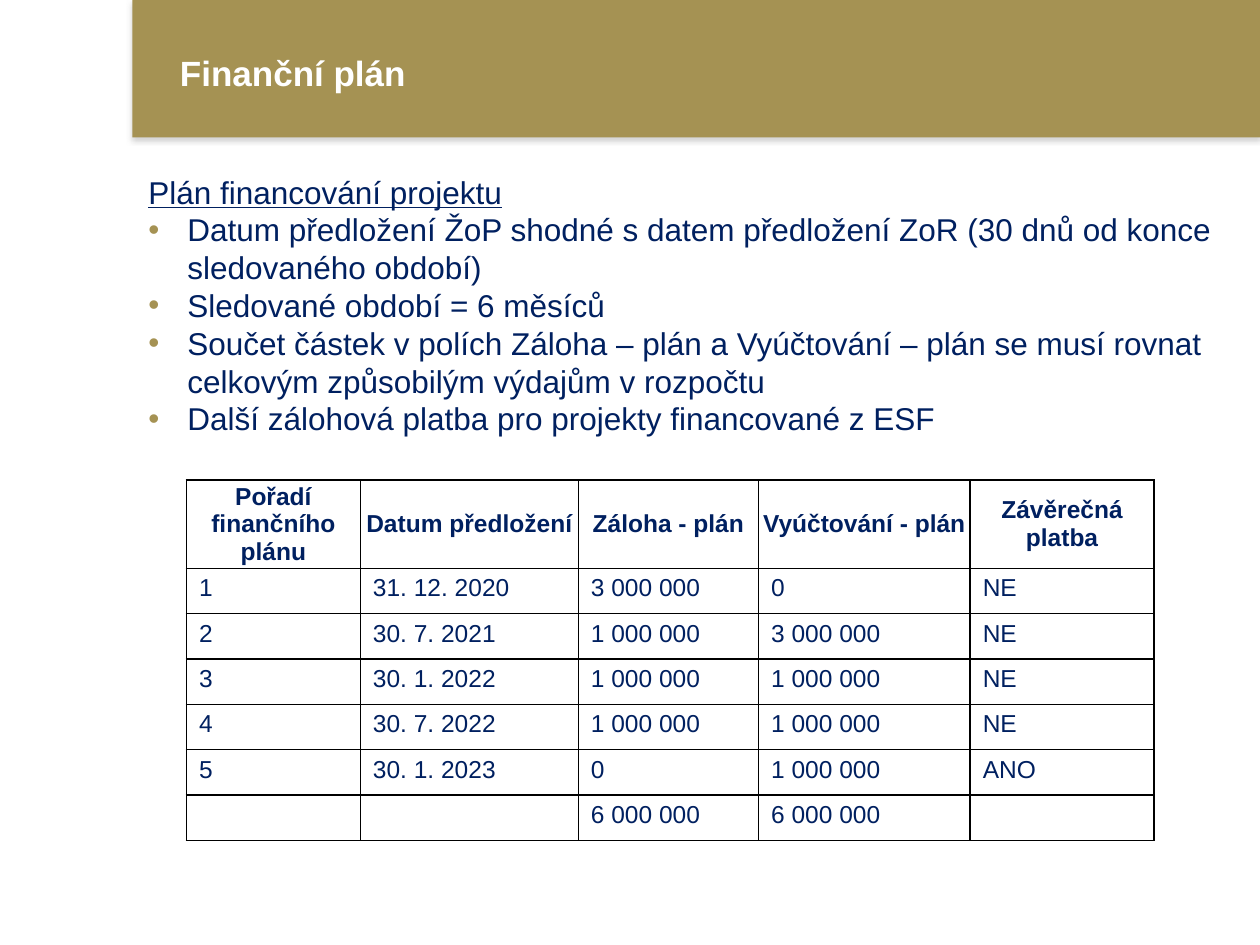
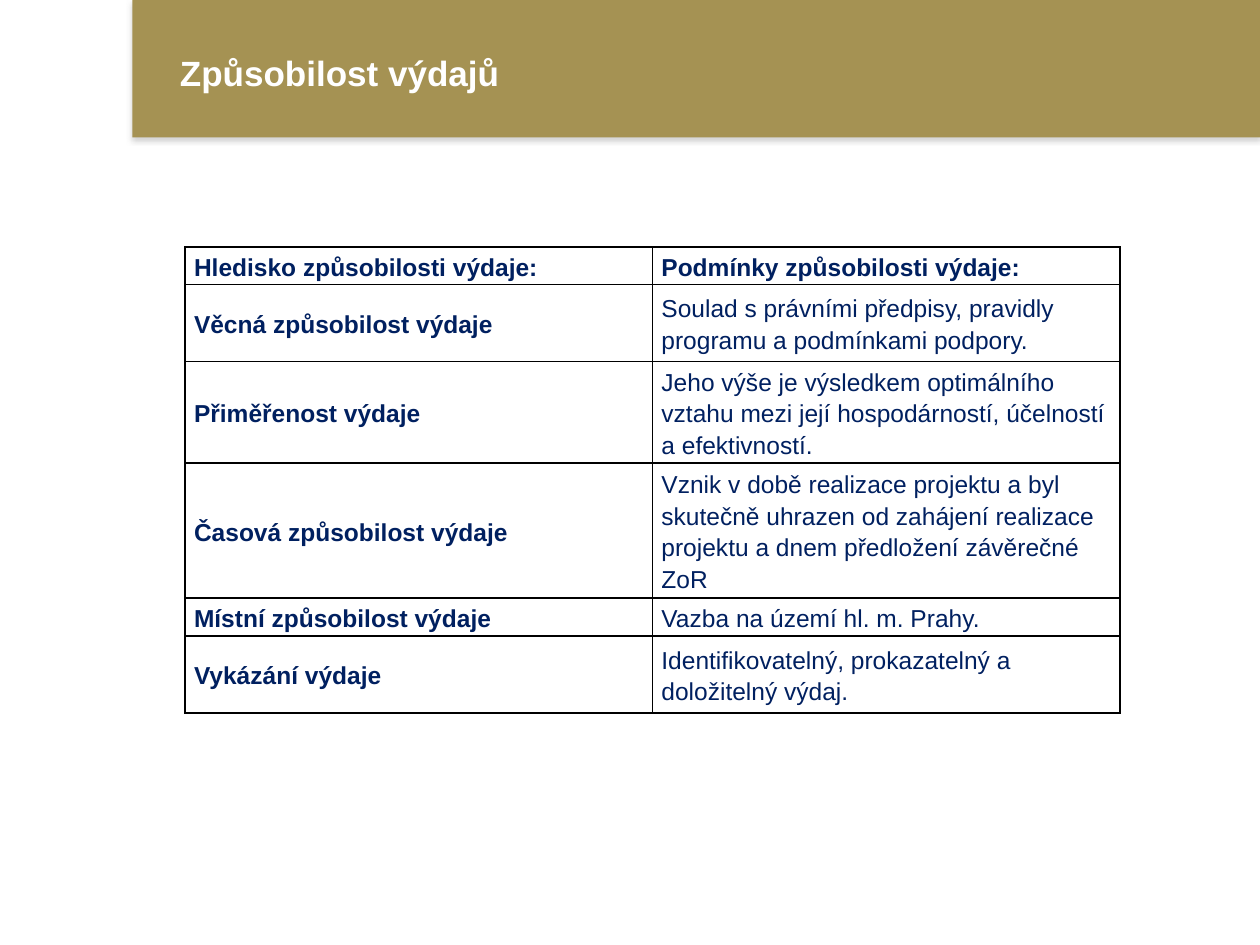
from lxml import etree
from pptx import Presentation
from pptx.dml.color import RGBColor
from pptx.enum.shapes import MSO_SHAPE
from pptx.enum.text import MSO_ANCHOR, PP_ALIGN
from pptx.oxml.ns import qn
from pptx.util import Inches, Pt

RECT = MSO_SHAPE.RECTANGLE
TOP, MIDDLE = MSO_ANCHOR.TOP, MSO_ANCHOR.MIDDLE
LEFT, CENTER = PP_ALIGN.LEFT, PP_ALIGN.CENTER

FONT = "Arial"
GOLD, NAVY, WHITE, BLACK, GREY = "A59253", "002060", "FFFFFF", "000000", "808080"
TITLE = {"size": Pt(20), "bold": True}
BODY = {"size": Pt(18)}
CELL = {"size": Pt(14), "bold": False}
CELL_BOLD = {**CELL, "bold": True}

PLAN_HEADER = ["Pořadí finančního plánu", "Datum předložení", "Záloha - plán",
               "Vyúčtování - plán", "Závěrečná platba"]
PLAN_ROWS = [
    ["1", "31. 12. 2020", "3 000 000", "0", "NE"],
    ["2", "30. 7. 2021", "1 000 000", "3 000 000", "NE"],
    ["3", "30. 1. 2022", "1 000 000", "1 000 000", "NE"],
    ["4", "30. 7. 2022", "1 000 000", "1 000 000", "NE"],
    ["5", "30. 1. 2023", "0", "1 000 000", "ANO"],
    ["", "", "6 000 000", "6 000 000", ""],
]
PLAN_POINTS = [
    "Datum předložení ŽoP shodné s datem předložení ZoR (30 dnů od konce sledovaného období)",
    "Sledované období = 6 měsíců",
    "Součet částek v polích Záloha – plán a Vyúčtování – plán se musí rovnat "
    "celkovým způsobilým výdajům v rozpočtu",
    "Další zálohová platba pro projekty financované z ESF",
]
ELIGIBILITY_ROWS = [
    ["Hledisko způsobilosti výdaje:", "Podmínky způsobilosti výdaje:"],
    ["Věcná způsobilost výdaje",
     "Soulad s právními předpisy, pravidly programu a podmínkami podpory."],
    ["Přiměřenost výdaje",
     "Jeho výše je výsledkem optimálního vztahu mezi její hospodárností, "
     "účelností a efektivností."],
    ["Časová způsobilost výdaje",
     "Vznik v době realizace projektu a byl skutečně uhrazen od zahájení "
     "realizace projektu a dnem předložení závěrečné ZoR"],
    ["Místní způsobilost výdaje", "Vazba na území hl. m. Prahy."],
    ["Vykázání výdaje", "Identifikovatelný, prokazatelný a doložitelný výdaj."],
]


def rgb(value):
    return RGBColor.from_string(value)


def inches(values):
    return [Inches(v) for v in values]


def add_element(parent, tag, **attrs):
    return etree.SubElement(parent, qn(tag), attrs)


def add_run(p, text, color, style):
    r = p.add_run()
    r.text = text
    r.font.name = FONT
    r.font.color.rgb = rgb(color)
    for name, value in style.items():
        setattr(r.font, name, value)


def add_bullet(p, indent):
    pPr = p._p.get_or_add_pPr()
    pPr.set("marL", str(Inches(indent)))
    pPr.set("indent", str(-Inches(indent)))
    add_element(add_element(pPr, "a:buClr"), "a:srgbClr", val=GOLD)
    add_element(pPr, "a:buFont", typeface=FONT)
    add_element(pPr, "a:buChar", char="•")


def add_shadow(sp):
    sp.shadow.inherit = False
    effects = sp._element.spPr.find(qn("a:effectLst"))
    shadow = add_element(effects, "a:outerShdw", blurRad=str(Pt(3.1)), dist=str(Pt(1.8)),
                         dir="5400000", algn="t", rotWithShape="0")
    color = add_element(shadow, "a:srgbClr", val=GREY)
    add_element(color, "a:alpha", val="35000")


def add_text_box(s, box):
    tf = s.shapes.add_textbox(*inches(box)).text_frame
    tf.word_wrap = True
    return tf


def add_title_band(s, title, box):
    left, top, width, height = box
    band = s.shapes.add_shape(RECT, *inches(box))
    band.fill.solid()
    band.fill.fore_color.rgb = rgb(GOLD)
    band.line.fill.background()
    add_shadow(band)
    tf = add_text_box(s, (left + 0.28, top + 0.4, width - 0.78, 0.35))
    tf.vertical_anchor = MIDDLE
    add_run(tf.paragraphs[0], title, WHITE, TITLE)


def add_points(s, heading, points, box):
    tf = add_text_box(s, box)
    add_run(tf.paragraphs[0], heading, NAVY, {**BODY, "underline": True})
    for point in points:
        p = tf.add_paragraph()
        add_bullet(p, 0.31)
        add_run(p, point, NAVY, BODY)


def add_grid(s, left, top, col_widths, row_heights):
    table = s.shapes.add_table(
        len(row_heights), len(col_widths),
        *inches((left, top, sum(col_widths), sum(row_heights)))).table
    table.first_row = table.horz_banding = False
    for col, width in zip(table.columns, col_widths):
        col.width = Inches(width)
    for row, height in zip(table.rows, row_heights):
        row.height = Inches(height)
    return table


def fill_cell(cell, text, style, anchor=TOP, align=LEFT, margins=(0.1, 0.05), spacing=1):
    tcPr = cell._tc.get_or_add_tcPr()
    for side in ("a:lnL", "a:lnR", "a:lnT", "a:lnB"):
        line = add_element(tcPr, side, w=str(Pt(1)))
        add_element(add_element(line, "a:solidFill"), "a:srgbClr", val=BLACK)
    cell.fill.background()
    cell.vertical_anchor = anchor
    cell.margin_left = cell.margin_right = Inches(margins[0])
    cell.margin_top = cell.margin_bottom = Inches(margins[1])
    p = cell.text_frame.paragraphs[0]
    p.alignment = align
    p.line_spacing = spacing
    if text:
        add_run(p, text, NAVY, style)
    else:
        add_element(p._p, "a:endParaRPr", sz=str(int(style["size"].pt * 100)))


def add_plan_table(s, left, top):
    table = add_grid(s, left, top, [1.38, 1.73, 1.43, 1.68, 1.46],
                     [0.61] + [0.36] * len(PLAN_ROWS))
    for c, text in enumerate(PLAN_HEADER):
        fill_cell(table.cell(0, c), text, CELL_BOLD, MIDDLE, CENTER, (0, 0))
    for r, row in enumerate(PLAN_ROWS, 1):
        for c, text in enumerate(row):
            fill_cell(table.cell(r, c), text, CELL)


def add_eligibility_table(s, left, top):
    table = add_grid(s, left, top, [3.71] * 2, [0.3, 0.61, 0.61, 0.91, 0.3, 0.61])
    for r, row in enumerate(ELIGIBILITY_ROWS):
        for c, text in enumerate(row):
            style = CELL_BOLD if r == 0 or c == 0 else CELL
            fill_cell(table.cell(r, c), text, style, MIDDLE,
                      margins=(0.07, 0), spacing=1.15)


def add_slide(prs, title):
    s = prs.slides.add_slide(prs.slide_layouts[6])
    add_title_band(s, title, (1.05, 0, 8.95, 1.09))
    return s


def main():
    prs = Presentation()
    prs.slide_width, prs.slide_height = Inches(10), Inches(7.5)

    s = add_slide(prs, "Finanční plán")
    add_points(s, "Plán financování projektu", PLAN_POINTS, (1.08, 1.32, 8.84, 2.22))
    add_plan_table(s, 1.48, 3.81)

    s = add_slide(prs, "Způsobilost výdajů")
    add_eligibility_table(s, 1.47, 1.96)

    prs.save("out.pptx")


if __name__ == "__main__":
    main()
